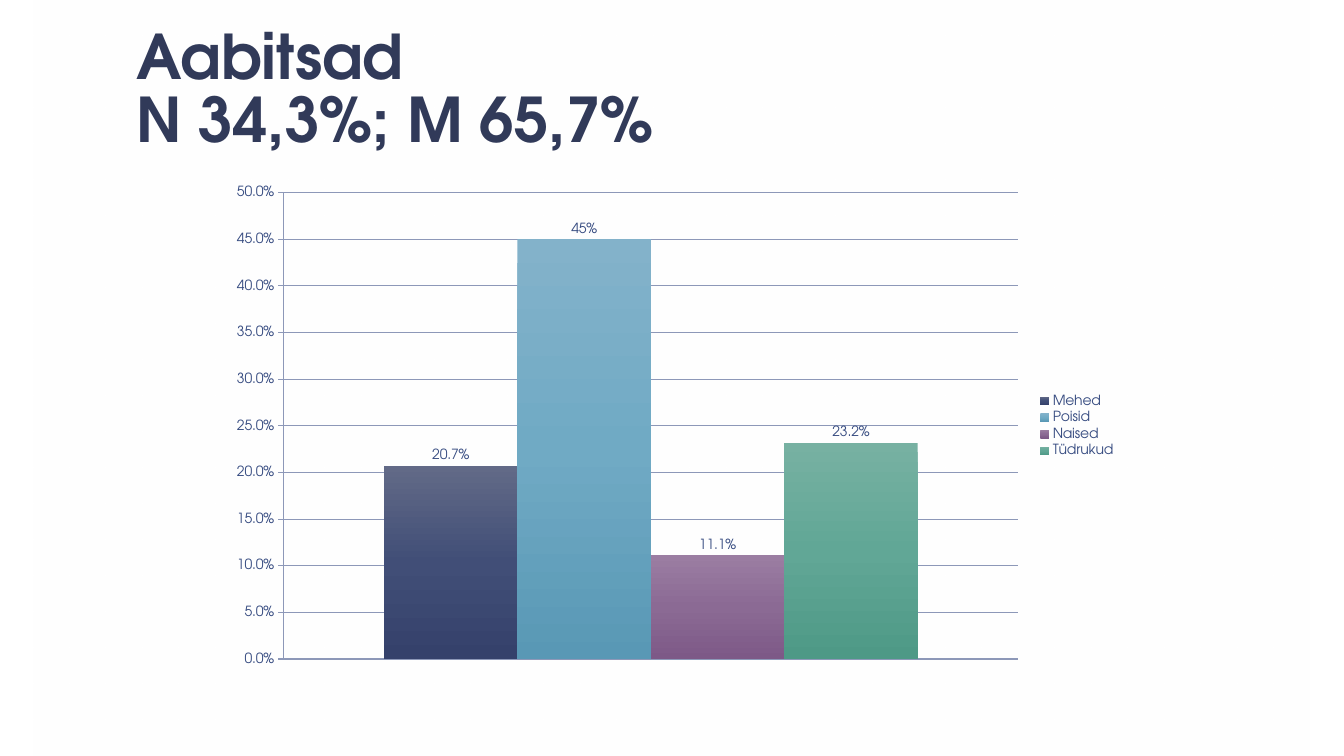
from copy import deepcopy
from lxml.etree import SubElement
from pptx import Presentation
from pptx.chart.data import CategoryChartData as ChartData
from pptx.dml.color import RGBColor
from pptx.enum.chart import XL_CHART_TYPE as Kind, XL_LABEL_POSITION as Spot
from pptx.enum.chart import XL_LEGEND_POSITION as Side, XL_TICK_MARK as Tick
from pptx.enum.shapes import MSO_SHAPE as Shape
from pptx.enum.text import MSO_ANCHOR as Anchor
from pptx.oxml.ns import qn
from pptx.util import Inches, Pt

FONT = "TeX Gyre Adventor"


def paint(target, color):
    target.rgb = RGBColor.from_string(color)


def blend(fill, angle, colors):
    """Fill with evenly spaced gradient stops and return them."""
    fill.gradient()
    fill.gradient_angle = angle
    first = fill.gradient_stops[0]._gs
    for _ in colors[2:]:
        first.addnext(deepcopy(first))
    stops = list(fill.gradient_stops)
    for i, (stop, color) in enumerate(zip(stops, colors)):
        stop.position = i / (len(colors) - 1)
        paint(stop.color, color)
    return stops


deck = Presentation()
deck.slide_width, deck.slide_height = Inches(13.33), Inches(7.5)
slide = deck.slides.add_slide(deck.slide_layouts[6])

# Background panel, fading to partly clear white
panel = slide.shapes.add_shape(
    Shape.RECTANGLE, Inches(0.33), 0, Inches(12.66), Inches(7.5))
panel.shadow.inherit = False
panel.line.fill.background()
fade = blend(panel.fill, 230, ["FFFFFF", "FFFFFF"])[-1]
SubElement(fade._gs[0], qn("a:alpha"), val="55000")

# Title
title = slide.shapes.add_textbox(
    Inches(1.22), Inches(0.08), Inches(11.11), Inches(1.53))
frame = title.text_frame
frame.word_wrap = True
frame.vertical_anchor = Anchor.BOTTOM
frame.margin_left = frame.margin_right = Inches(0.13)
frame.margin_top = frame.margin_bottom = Inches(0.07)
para = frame.paragraphs[0]
para.text = "Aabitsad\vN 34,3%; M 65,7%"
para.line_spacing = 0.85
para.font.name, para.font.size, para.font.bold = FONT, Pt(44), True
paint(para.font.color, "313A59")

# Chart: name, value, label format, gradient from top to bottom
groups = [
    ("Mehed", 0.207, "0.0%", ["626A87", "414E77", "35416B"]),
    ("Poisid", 0.45, "0%", ["83B2CA", "70AAC4", "5998B5"]),
    ("Naised", 0.111, "0.0%", ["9B7DA2", "8B6A94", "7D5987"]),
    ("Tüdrukud", 0.232, "0.0%", ["77B1A2", "61A796", "4E9986"]),
]
data = ChartData()
data.categories = ["1"]
for name, value, _, _ in groups:
    data.add_series(name, [value])
chart = slide.shapes.add_chart(
    Kind.COLUMN_CLUSTERED, Inches(2.17), Inches(1.75),
    Inches(9), Inches(4.95), data).chart
chart.has_title = False
chart.font.name, chart.font.size = FONT, Pt(10)
paint(chart.font.color, "374C81")
chart.has_legend = True
chart.legend.position = Side.RIGHT
chart.legend.include_in_layout = False

# Axes
chart.category_axis.visible = False
axis = chart.value_axis
axis.minimum_scale, axis.maximum_scale, axis.major_unit = 0, 0.5, 0.05
axis.major_tick_mark = Tick.OUTSIDE
axis.tick_labels.number_format = "0.0%"
axis.tick_labels.number_format_is_linked = False
axis.has_major_gridlines = True
for line in (axis.format.line, axis.major_gridlines.format.line):
    line.width = Pt(0.75)
    paint(line.color, "8D98B8")

# Bars and their labels
plot = chart.plots[0]
plot.gap_width, plot.overlap = 150, 0
plot.vary_by_categories = False
for bar, (_, _, form, colors) in zip(plot.series, groups):
    blend(bar.format.fill, 270, colors)
    labels = bar.data_labels
    labels.show_value = True
    labels.number_format = form
    labels.number_format_is_linked = False
    labels.position = Spot.OUTSIDE_END

deck.save("out.pptx")
